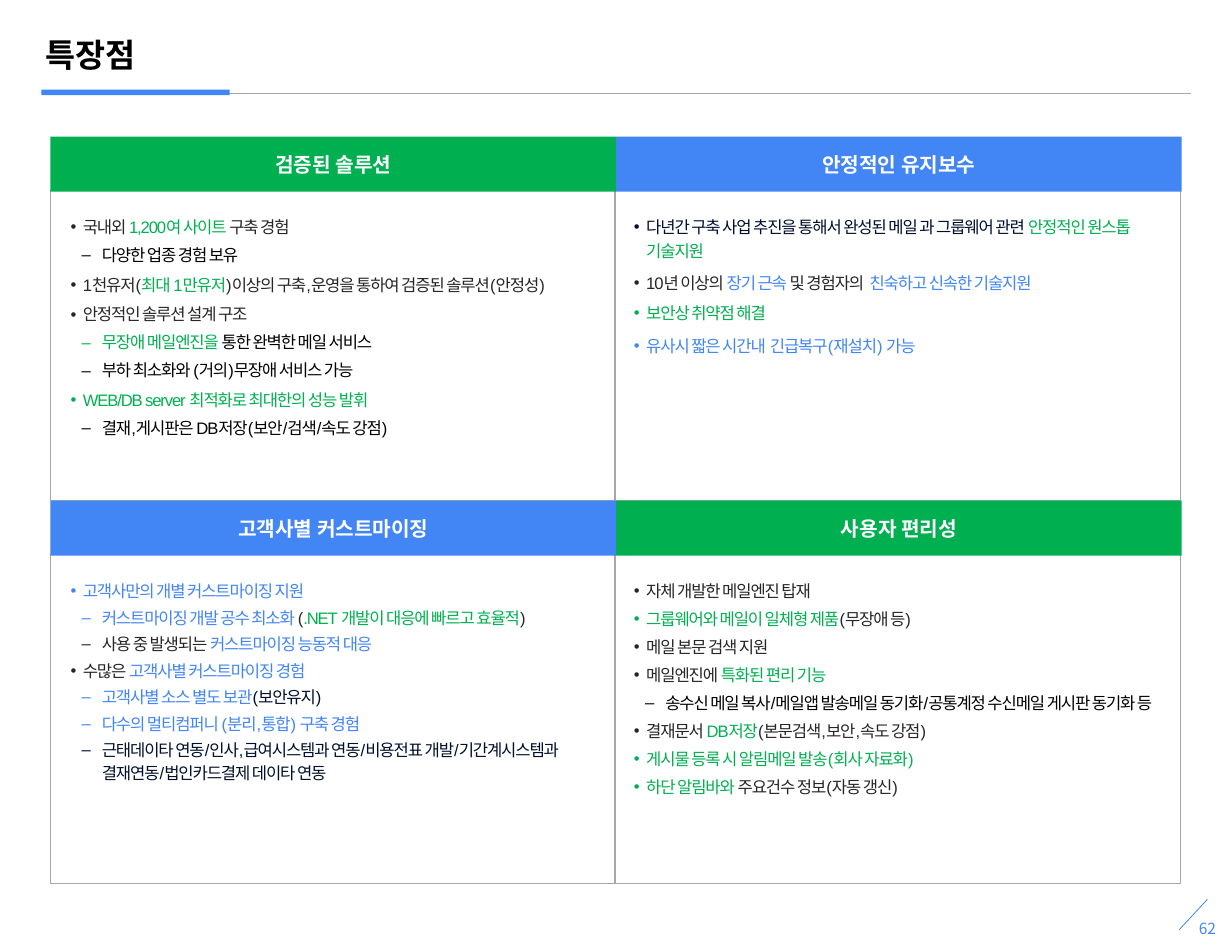
from lxml.etree import SubElement
from pptx import Presentation
from pptx.dml.color import RGBColor
from pptx.enum.shapes import MSO_CONNECTOR, MSO_SHAPE
from pptx.enum.text import MSO_ANCHOR, MSO_AUTO_SIZE, PP_ALIGN
from pptx.oxml.ns import qn
from pptx.util import Inches, Pt

COLORS = {
    "blue": "4285F4", "green": "00B050", "gray": "A6A6A6", "dark": "262626",
    "navy": "000F2E", "black": "000000", "white": "FFFFFF",
}
KOREAN = "Noto Sans CJK KR"


def rgb(name):
    return RGBColor.from_string(COLORS[name])


def add_text(p, text, size=10.7, color="dark", font="Arial", bold=False, spacing=0):
    r = p.add_run()
    r.text = text
    r.font.size, r.font.bold, r.font.name = Pt(size), bold, font
    r.font.color.rgb = rgb(color)
    rPr = r.font._element
    SubElement(rPr, qn("a:ea")).set("typeface", KOREAN)
    if spacing:
        rPr.set("spc", str(round(spacing * 100)))


prs = Presentation()
prs.slide_width, prs.slide_height = Inches(11), Inches(8.5)
s = prs.slides.add_slide(prs.slide_layouts[6])

# Page number
sp = s.shapes.add_textbox(Inches(10.51), Inches(8.06), Inches(0.54), Inches(0.45))
tf = sp.text_frame
tf.word_wrap = True
tf.vertical_anchor = MSO_ANCHOR.MIDDLE
tf.margin_left = tf.margin_right = Inches(0.08)
tf.margin_top = tf.margin_bottom = Inches(0.04)
tf.paragraphs[0].alignment = PP_ALIGN.CENTER
add_text(tf.paragraphs[0], "62", size=9.9, color="blue", font=KOREAN)

# Title
sp = s.shapes.add_textbox(Inches(0.31), Inches(0.28), Inches(1.03), Inches(0.44))
tf = sp.text_frame
tf.word_wrap = False
tf.auto_size = MSO_AUTO_SIZE.SHAPE_TO_FIT_TEXT
tf.paragraphs[0].line_spacing = Pt(24)
add_text(tf.paragraphs[0], "특장점", size=21, color="black", font=KOREAN, bold=True)

# Page number slash and title rule
for x1, y1, x2, y2, color in [
    (10.78, 8.03, 10.53, 8.3, "blue"),
    (1.52, 0.83, 10.63, 0.83, "gray"),
]:
    line = s.shapes.add_connector(
        MSO_CONNECTOR.STRAIGHT, Inches(x1), Inches(y1), Inches(x2), Inches(y2))
    line.line.color.rgb = rgb(color)
    line.line.width = Pt(0.5)
    SubElement(line._element.spPr, qn("a:effectLst"))

# Title accent bar
bar = s.shapes.add_shape(
    MSO_SHAPE.RECTANGLE, Inches(0.37), Inches(0.8), Inches(1.68), Inches(0.05))
bar.shadow.inherit = False
bar.fill.solid()
bar.fill.fore_color.rgb = rgb("blue")
bar.line.fill.background()

# Panels: column, row, header colour, heading, paragraphs (level, space before, runs)
PANELS = [
    (0, 0, "green", "검증된 솔루션", [
        (1, 4, [("dark", "국내외 "), ("green", "1,200여 사이트 "), ("dark", "구축 경험")]),
        (2, 3, [("black", "다양한 업종 경험 보유")]),
        (1, 4, [("dark", "1천유저("), ("green", "최대 1만유저"),
                ("dark", ")이상의 구축,운영을 통하여 검증된 솔루션(안정성)")]),
        (1, 4, [("dark", "안정적인 솔루션 설계 구조")]),
        (2, 3, [("green", "무장애 메일엔진을 "), ("black", "통한 완벽한 메일 서비스")]),
        (2, 3, [("black", "부하 최소화와 (거의)무장애 서비스 가능")]),
        (1, 4, [("green", "WEB/DB server 최적화로 최대한의 성능 발휘")]),
        (2, 3, [("black", "결재,게시판은 DB저장(보안/검색/속도 강점)")]),
    ]),
    (1, 0, "blue", "안정적인 유지보수", [
        (1, 6, [("navy", "다년간 구축 사업 추진을 통해서 완성된 메일 과 그룹웨어 관련 "),
                ("green", "안정적인 원스톱  기술지원")]),
        (1, 6, [("dark", "10년 이상의 "), ("blue", "장기 근속"),
                ("dark", " 및 경험자의  "), ("blue", "친숙하고 신속한 기술지원")]),
        (1, 4, [("green", "보안상 취약점 해결")]),
        (1, 6, [("blue", "유사시 짧은 시간내  긴급복구(재설치) 가능")]),
    ]),
    (0, 1, "blue", "고객사별 커스트마이징", [
        (1, 2, [("blue", "고객사만의 개별 커스트마이징 지원")]),
        (2, 2, [("blue", "커스트마이징 개발 공수 최소화 "), ("dark", "("),
                ("green", ".NET 개발이 대응에 빠르고 효율적"), ("dark", ")")]),
        (2, 2, [("dark", "사용 중 발생되는 "), ("blue", "커스트마이징 능동적 대응")]),
        (1, 2, [("dark", "수많은 "), ("blue", "고객사별 커스트마이징 경험")]),
        (2, 2, [("blue", "고객사별 소스 별도 보관"), ("navy", "(보안유지)")]),
        (2, 2, [("blue", "다수의 멀티컴퍼니 (분리,통합) 구축 경험")]),
        (2, 2, [("navy", "근태데이타 연동/인사,급여시스템과 연동/비용전표 개발/"
                         "기간계시스템과 결재연동/법인카드결제 데이타 연동")]),
    ]),
    (1, 1, "green", "사용자 편리성", [
        (1, 3, [("dark", "자체 개발한 메일엔진 탑재")]),
        (1, 3, [("green", "그룹웨어와 메일이 일체형 제품"), ("dark", "(무장애 등)")]),
        (1, 3, [("dark", "메일 본문 검색 지원")]),
        (1, 3, [("dark", "메일엔진에 "), ("green", "특화된 편리 기능")]),
        (2, 3, [("black", "송수신 메일 복사/메일앱 발송메일 동기화/"
                          "공통계정 수신메일 게시판 동기화 등")]),
        (1, 3, [("dark", "결재문서 "), ("green", "DB저장"),
                ("dark", "(본문검색,보안,속도 강점)")]),
        (1, 3, [("green", "게시물 등록 시 알림메일 발송(회사 자료화)")]),
        (1, 3, [("green", "하단 알림바와 "), ("dark", "주요건수 정보(자동 갱신)")]),
    ]),
]
PANEL_W, HEADER_H = 5.05, 0.49
HEADER_TOPS = (1.22, 4.47)
BODY_HEIGHTS = (2.77, 2.94)
BULLETS = {1: ("•", 0.11, -0.11), 2: ("–", 0.28, -0.18)}

# Panel frames
for col, row, *_ in PANELS:
    sp = s.shapes.add_shape(
        MSO_SHAPE.RECTANGLE, Inches(0.45 + col * 5.04), Inches(HEADER_TOPS[row] + 0.48),
        Inches(PANEL_W), Inches(BODY_HEIGHTS[row]))
    sp.shadow.inherit = False
    sp.fill.solid()
    sp.fill.fore_color.rgb = rgb("white")
    sp.line.color.rgb = rgb("gray")
    sp.line.width = Pt(1)

# Panel headers and bullet lists
for col, row, color, heading, paragraphs in PANELS:
    top = HEADER_TOPS[row]
    sp = s.shapes.add_shape(
        MSO_SHAPE.RECTANGLE, Inches(0.45 + col * PANEL_W), Inches(top),
        Inches(PANEL_W), Inches(HEADER_H))
    sp.shadow.inherit = False
    sp.fill.solid()
    sp.fill.fore_color.rgb = rgb(color)
    sp.line.fill.background()
    tf = sp.text_frame
    tf.word_wrap = False
    tf.vertical_anchor = MSO_ANCHOR.MIDDLE
    tf.paragraphs[0].alignment = PP_ALIGN.CENTER
    add_text(tf.paragraphs[0], heading, size=13, color="white", bold=True)

    sp = s.shapes.add_textbox(
        Inches(0.51 + col * 5.03), Inches(top + 0.64), Inches(4.94), Inches(2.25))
    tf = sp.text_frame
    tf.word_wrap = True
    tf.margin_left = Inches(0.12)
    for i, (level, space, runs) in enumerate(paragraphs):
        p = tf.add_paragraph() if i else tf.paragraphs[0]
        p.level = level
        p.line_spacing = Pt(15)
        p.space_before = Pt(space if i else 0)
        char, margin, indent = BULLETS[level]
        pPr = p._p.get_or_add_pPr()
        pPr.set("marL", str(Inches(margin)))
        pPr.set("indent", str(Inches(indent)))
        SubElement(pPr, qn("a:buFont")).set("typeface", "Arial")
        SubElement(pPr, qn("a:buChar")).set("char", char)
        for run_color, text in runs:
            add_text(p, text, color=run_color, spacing=-0.7)

prs.save("out.pptx")
